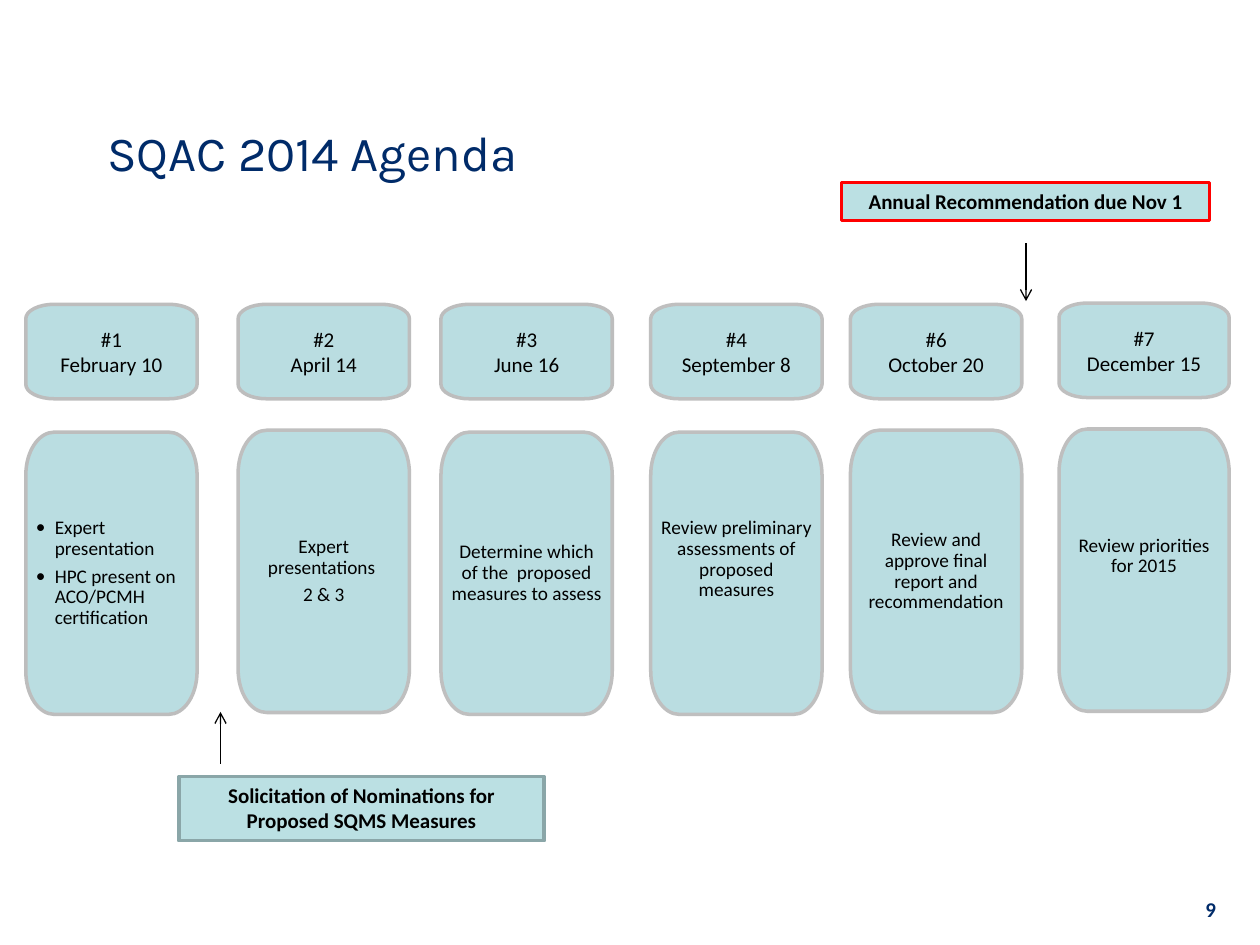
import math
from dataclasses import dataclass

import pptx
import pptx.dml.color
import pptx.enum.shapes
import pptx.enum.text
import pptx.oxml
import pptx.oxml.ns
import pptx.util
from lxml import etree

RGBColor = pptx.dml.color.RGBColor
PP_ALIGN = pptx.enum.text.PP_ALIGN
MSO_ANCHOR = pptx.enum.text.MSO_ANCHOR
Pt = pptx.util.Pt
qn = pptx.oxml.ns.qn

NAVY = RGBColor(0x00, 0x2B, 0x69)
BLACK = RGBColor(0x00, 0x00, 0x00)
RED = RGBColor(0xFF, 0x00, 0x00)
CARD_FILL = RGBColor(0xBA, 0xDD, 0xE1)
CARD_LINE = RGBColor(0xBF, 0xBF, 0xBF)
EARLY_LINE = RGBColor(0xBD, 0xBD, 0xBD)
CALLOUT_FILL = RGBColor(0xBB, 0xE0, 0xE3)
CALLOUT_LINE = RGBColor(0x8A, 0xA6, 0xA8)

BODY_FONT = "Calibri"
COLUMNS, ROWS = 100, 75
HEAD_HEIGHT, BODY_HEIGHT = 7.5, 22.4
CARD_INSET = 0.8
HALF_CORNER = math.pi / 4
HANDLE = 4 / 3 * math.tan(HALF_CORNER / 4)  # Bezier handle of a 45 degree arc


@dataclass
class Meeting:
    number: str
    date: str
    topics: list[str]
    left: float
    head_top: float = 24.15
    body_top: float = 34.3
    width: float = 13.6
    head_line: RGBColor = CARD_LINE
    body_line: RGBColor = CARD_LINE
    bulleted: bool = False
    lift: float = 0  # extra space kept free below the topics


@dataclass
class Callout:
    text: str
    box: tuple[float, float, float, float]
    line: RGBColor
    arrow_x: float
    arrow_from: float
    arrow_to: float


MEETINGS = [
    Meeting("#1", "February 10",
            ["Expert presentation", "HPC present on ACO/PCMH certification"],
            2.05, head_line=EARLY_LINE, body_line=EARLY_LINE, bulleted=True),
    Meeting("#2", "April 14", ["Expert presentations ", "2 & 3"], 18.9,
            body_top=34.15, head_line=EARLY_LINE),
    Meeting("#3", "June 16",
            ["Determine which of the  proposed measures to assess"], 35,
            head_line=EARLY_LINE),
    Meeting("#4", "September 8",
            ["Review preliminary assessments of proposed measures"], 51.65, lift=2.2),
    Meeting("#6", "October 20",
            ["Review and approve final report and recommendation"], 67.5,
            body_top=34.15),
    Meeting("#7", "December 15", ["Review priorities for 2015"], 84.05,
            head_top=24.05, body_top=34.05, width=13.5, lift=2.2),
]

CALLOUTS = [
    Callout("Annual Recommendation due Nov 1", (66.8, 14.5, 29.2, 3), RED,
            81.43, 19.3, 23.9),
    Callout("Solicitation of Nominations for Proposed SQMS Measures",
            (14.2, 61.63, 29, 5.1), CALLOUT_LINE, 17.5, 60.6, 56.5),
]

prs = pptx.Presentation()
prs.slide_width, prs.slide_height = pptx.util.Inches(10), pptx.util.Inches(7.5)


def col(n: float) -> int:
    return round(prs.slide_width * n / COLUMNS)


def row(n: float) -> int:
    return round(prs.slide_height * n / ROWS)


def grid_box(left: float, top: float, width: float, height: float) -> tuple:
    return col(left), row(top), col(width), row(height)


def add_run(p, text: str, size: float, color=BLACK, bold=False, font=BODY_FONT) -> None:
    r = p.add_run()
    r.text = text
    r.font.name, r.font.size, r.font.bold = font, Pt(size), bold
    r.font.color.rgb = color


def style(sp, fill: RGBColor, line: RGBColor) -> None:
    sp.shadow.inherit = False
    sp.fill.solid()
    sp.fill.fore_color.rgb = fill
    sp.line.color.rgb = line
    sp.line.width = Pt(2)


def add_bullet(p) -> None:
    pPr = p._p.get_or_add_pPr()
    pPr.set("marL", str(col(1.5)))
    pPr.set("indent", str(-col(1.5)))
    etree.SubElement(pPr, qn("a:buFont")).set("typeface", BODY_FONT)
    etree.SubElement(pPr, qn("a:buChar")).set("char", "•")


def add_card(s, left: float, top: float, width: float, height: float, line: RGBColor):
    """Draw a box with elliptical corners, each made of two Bezier curves."""
    x, y, w, h = grid_box(left, top, width, height)
    rx, ry = w / 6, h * 0.153
    centres = [(rx, ry), (w - rx, ry), (w - rx, h - ry), (rx, h - ry)]
    points, curves = [], {}
    for i, (cx, cy) in enumerate(centres):
        for half in range(3):
            a = math.pi + i * math.pi / 2 + half * HALF_CORNER
            px, py = cx + rx * math.cos(a), cy + ry * math.sin(a)
            dx, dy = -HANDLE * rx * math.sin(a), HANDLE * ry * math.cos(a)
            if half:
                curves[len(points)] = [after, (px - dx, py - dy), (px, py)]
            after = px + dx, py + dy
            points.append((x + round(px), y + round(py)))
    builder = s.shapes.build_freeform(*points[0])
    builder.add_line_segments(points[1:] + points[:1], close=True)
    sp = builder.convert_to_shape()
    for i, segment in enumerate(list(sp._element.iter(qn("a:lnTo"))), start=1):
        if i in curves:
            curve = etree.Element(qn("a:cubicBezTo"))
            for px, py in curves[i]:
                etree.SubElement(curve, qn("a:pt"), x=str(round(px)), y=str(round(py)))
            segment.getparent().replace(segment, curve)
    style(sp, CARD_FILL, line)
    tf = sp.text_frame
    tf.word_wrap = True
    tf.vertical_anchor = MSO_ANCHOR.MIDDLE
    tf.margin_left = tf.margin_right = col(CARD_INSET)
    tf.margin_top = tf.margin_bottom = row(CARD_INSET)
    return sp


def add_paragraphs(tf, texts: list[str]) -> list:
    return [(tf.paragraphs[0] if i == 0 else tf.add_paragraph(), text)
            for i, text in enumerate(texts)]


def add_head(s, m: Meeting) -> None:
    sp = add_card(s, m.left, m.head_top, m.width, HEAD_HEIGHT, m.head_line)
    for p, text in add_paragraphs(sp.text_frame, [m.number, m.date]):
        p.alignment = PP_ALIGN.CENTER
        add_run(p, text, 12)


def add_body(s, m: Meeting) -> None:
    sp = add_card(s, m.left, m.body_top, m.width, BODY_HEIGHT, m.body_line)
    sp.text_frame.margin_bottom = row(CARD_INSET + m.lift)
    for p, text in add_paragraphs(sp.text_frame, m.topics):
        p.alignment = PP_ALIGN.LEFT if m.bulleted else PP_ALIGN.CENTER
        p.line_spacing = 0.9
        p.space_after = Pt(4)
        if m.bulleted:
            add_bullet(p)
        add_run(p, text, 11)


def add_callout(s, c: Callout) -> None:
    sp = s.shapes.add_shape(pptx.enum.shapes.MSO_SHAPE.RECTANGLE, *grid_box(*c.box))
    style(sp, CALLOUT_FILL, c.line)
    tf = sp.text_frame
    tf.word_wrap = True
    tf.auto_size = pptx.enum.text.MSO_AUTO_SIZE.SHAPE_TO_FIT_TEXT
    tf.vertical_anchor = MSO_ANCHOR.TOP
    p = tf.paragraphs[0]
    p.alignment = PP_ALIGN.CENTER
    add_run(p, c.text, 12, bold=True)

    arrow = s.shapes.add_connector(pptx.enum.shapes.MSO_CONNECTOR.STRAIGHT,
                                   col(c.arrow_x), row(c.arrow_from),
                                   col(c.arrow_x), row(c.arrow_to))
    arrow.line.color.rgb = BLACK
    arrow.line.width = Pt(0.75)
    etree.SubElement(arrow.line._get_or_add_ln(), qn("a:tailEnd")).set("type", "arrow")
    etree.SubElement(arrow._element.spPr, qn("a:effectLst"))


s = prs.slides.add_slide(prs.slide_layouts[5])
title = s.shapes.title
title.left, title.top, title.width, title.height = grid_box(7.5, 6.65, 85, 10.8)
title.text_frame.vertical_anchor = MSO_ANCHOR.MIDDLE
p = title.text_frame.paragraphs[0]
p.alignment = PP_ALIGN.LEFT
add_run(p, "SQAC 2014 Agenda", 28, NAVY, font="Karla")
for draw, items in ((add_body, MEETINGS), (add_head, MEETINGS), (add_callout, CALLOUTS)):
    for item in items:
        draw(s, item)
tf = s.shapes.add_textbox(*grid_box(76.7, 70.8, 20.8, 2.7)).text_frame
tf.word_wrap = True
tf.vertical_anchor = MSO_ANCHOR.MIDDLE
p = tf.paragraphs[0]
p.alignment = PP_ALIGN.RIGHT
add_run(p, "9", 12, NAVY, bold=True)
prs.save("out.pptx")
